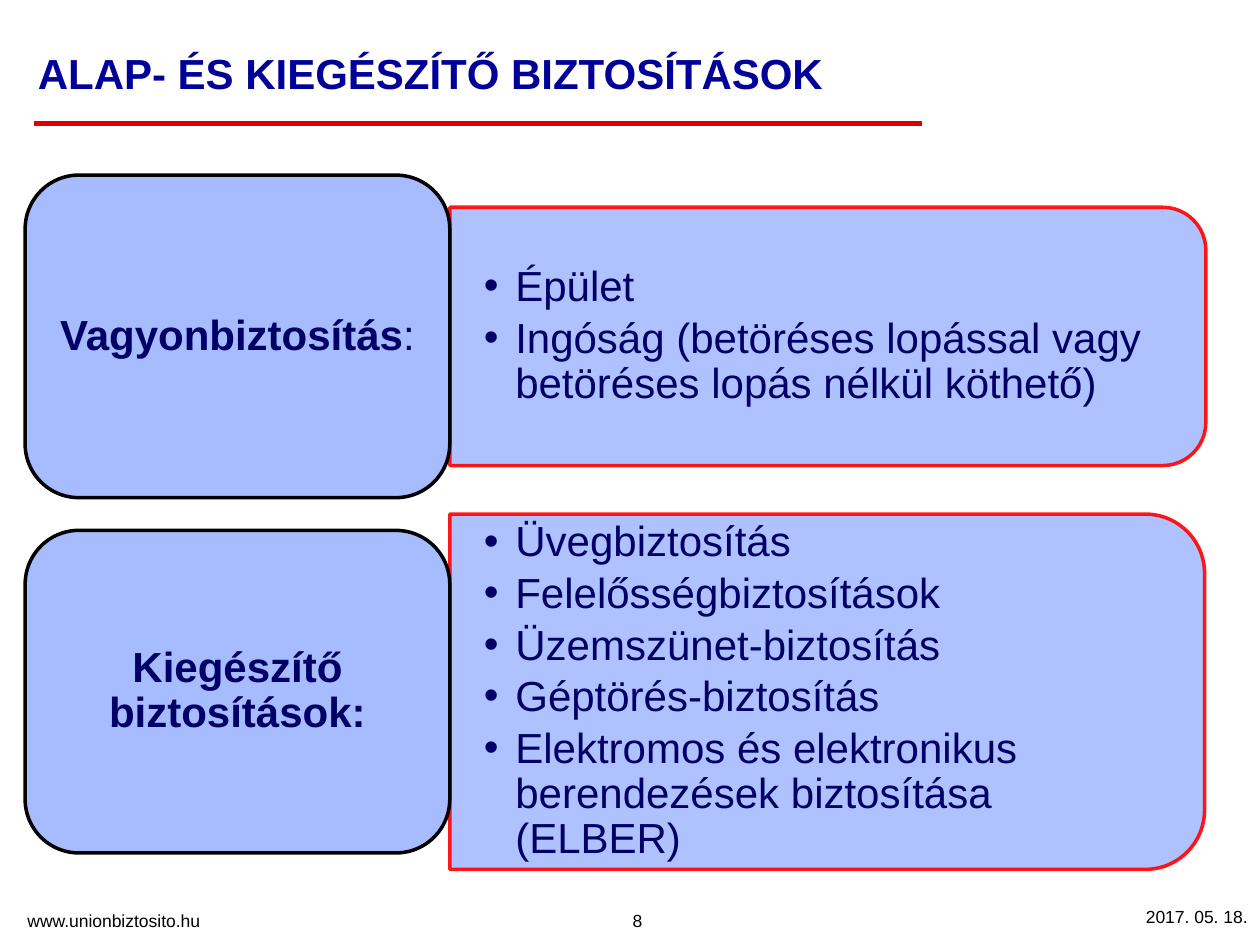
import pptx
import pptx.util
import pptx.oxml
import pptx.oxml.ns
import pptx.dml.color
import pptx.enum.shapes
import pptx.enum.text
from lxml import etree

RGB = pptx.dml.color.RGBColor
SHAPE = pptx.enum.shapes.MSO_SHAPE
ALIGN = pptx.enum.text.PP_ALIGN
ANCHOR = pptx.enum.text.MSO_ANCHOR
qn = pptx.oxml.ns.qn

PX = 9144
BLACK = RGB(0, 0, 0)
RED = RGB(0xFF, 0, 0)
RULE = RGB(0xDD, 0, 0)
NAVY = RGB(0, 0, 0x99)
INK = RGB(0, 0, 0x66)
PALE = RGB(0xA7, 0xBC, 0xFF)

ROWS = [
    ("Vagyonbiztosítás", ":", 205, 600,
     ["Épület",
      "Ingóság (betöréses lopással vagy betöréses lopás nélkül köthető)"]),
    ("Kiegészítő biztosítások:", "", 282, 599,
     ["Üvegbiztosítás", "Felelősségbiztosítások", "Üzemszünet-biztosítás",
      "Géptörés-biztosítás",
      "Elektromos és elektronikus berendezések biztosítása (ELBER)"]),
]


def place(*box):
    return [round(n * PX) for n in box]


def add_dot(para):
    props = para._p.get_or_add_pPr()
    props.set("marL", str(25 * PX))
    props.set("indent", str(-25 * PX))
    etree.SubElement(props, qn("a:buFont")).set("typeface", "Arial")
    etree.SubElement(props, qn("a:buChar")).set("char", "•")


def write(frame, *lines, size=24, color=INK, bold=False, tail="",
          align=ALIGN.LEFT, anchor=ANCHOR.MIDDLE, space=0.9, after=0,
          dots=False, inset=(10, 5)):
    frame.word_wrap = True
    frame.auto_size = pptx.enum.text.MSO_AUTO_SIZE.NONE
    frame.vertical_anchor = anchor
    frame.margin_left = frame.margin_right = inset[0] * PX
    frame.margin_top = frame.margin_bottom = inset[1] * PX
    for i, line in enumerate(lines):
        para = frame.paragraphs[0] if i == 0 else frame.add_paragraph()
        para.alignment = align
        para.line_spacing = space
        para.space_before = pptx.util.Pt(0)
        para.space_after = pptx.util.Pt(after)
        if dots:
            add_dot(para)
        for part, heavy in ((line, bold), (tail, False)):
            if part:
                run = para.add_run()
                run.text = part
                run.font.name = "Arial"
                run.font.size = pptx.util.Pt(size)
                run.font.bold = heavy
                run.font.color.rgb = color


def add_panel(slide, kind, box, edge):
    shape = slide.shapes.add_shape(kind, *place(*box))
    shape.shadow.inherit = False
    shape.fill.solid()
    shape.fill.fore_color.rgb = PALE
    shape.line.color.rgb = edge
    shape.line.width = pptx.util.Pt(2)
    return shape


def fade(shape, part):
    for tone in shape._element.spPr.iter(qn("a:srgbClr")):
        etree.SubElement(tone, qn("a:alpha")).set("val", str(part * 1000))


def add_head(slide, left, top, width, height):
    title = slide.shapes.title
    title.left, title.top, title.width, title.height = place(
        left, top, width, height)
    write(title.text_frame, "ALAP- ÉS KIEGÉSZÍTŐ BIZTOSÍTÁSOK",
          color=NAVY, bold=True, space=0.8)
    rule = slide.shapes.add_connector(
        pptx.enum.shapes.MSO_CONNECTOR.STRAIGHT,
        *place(left + 7, top + 70, left + width, top + 70))
    rule.line.color.rgb = RULE
    rule.line.width = pptx.util.Pt(2.5)
    etree.SubElement(rule._element.spPr, qn("a:effectLst"))


def add_row(slide, left, top, width, height, row):
    label, tail, tall, wide, items = row
    mid = top + height / 2
    edge = left + width
    turned = (edge + (wide - tall) / 2, mid - wide / 2, tall, wide)
    panel = add_panel(slide, SHAPE.ROUND_2_SAME_RECTANGLE, turned, RED)
    panel.rotation = 90
    fade(panel, 90)
    trim = round(tall * 0.0488)
    body = slide.shapes.add_textbox(*place(
        edge, mid - tall / 2 + trim, wide - trim, tall - 2 * trim))
    write(body.text_frame, *items, dots=True, after=3.6, inset=(27, 14))
    card = add_panel(slide, SHAPE.ROUNDED_RECTANGLE,
                     (left, top, width, height), BLACK)
    write(card.text_frame, label, tail=tail, bold=True, align=ALIGN.CENTER)


def add_foot(slide):
    for words, box, align, anchor in (
            ("8", (345, 690, 322, 54), ALIGN.CENTER, ANCHOR.BOTTOM),
            ("www.unionbiztosito.hu", (12, 717, 260, 27),
             ALIGN.LEFT, ANCHOR.TOP),
            ("2017. 05. 18.", (815, 714, 185, 27), ALIGN.RIGHT, ANCHOR.TOP)):
        note = slide.shapes.add_textbox(*place(*box))
        write(note.text_frame, words, size=10, color=BLACK, align=align,
              anchor=anchor, space=1.0)


def main():
    deck = pptx.Presentation()
    deck.slide_width, deck.slide_height = place(1000, 750)
    slide = deck.slides.add_slide(deck.slide_layouts[5])
    add_foot(slide)
    add_head(slide, 20, 28, 712, 67)
    for i, row in enumerate(ROWS):
        add_row(slide, 20, 139 + i * 282, 337, 256, row)
    deck.save("out.pptx")


if __name__ == "__main__":
    main()
